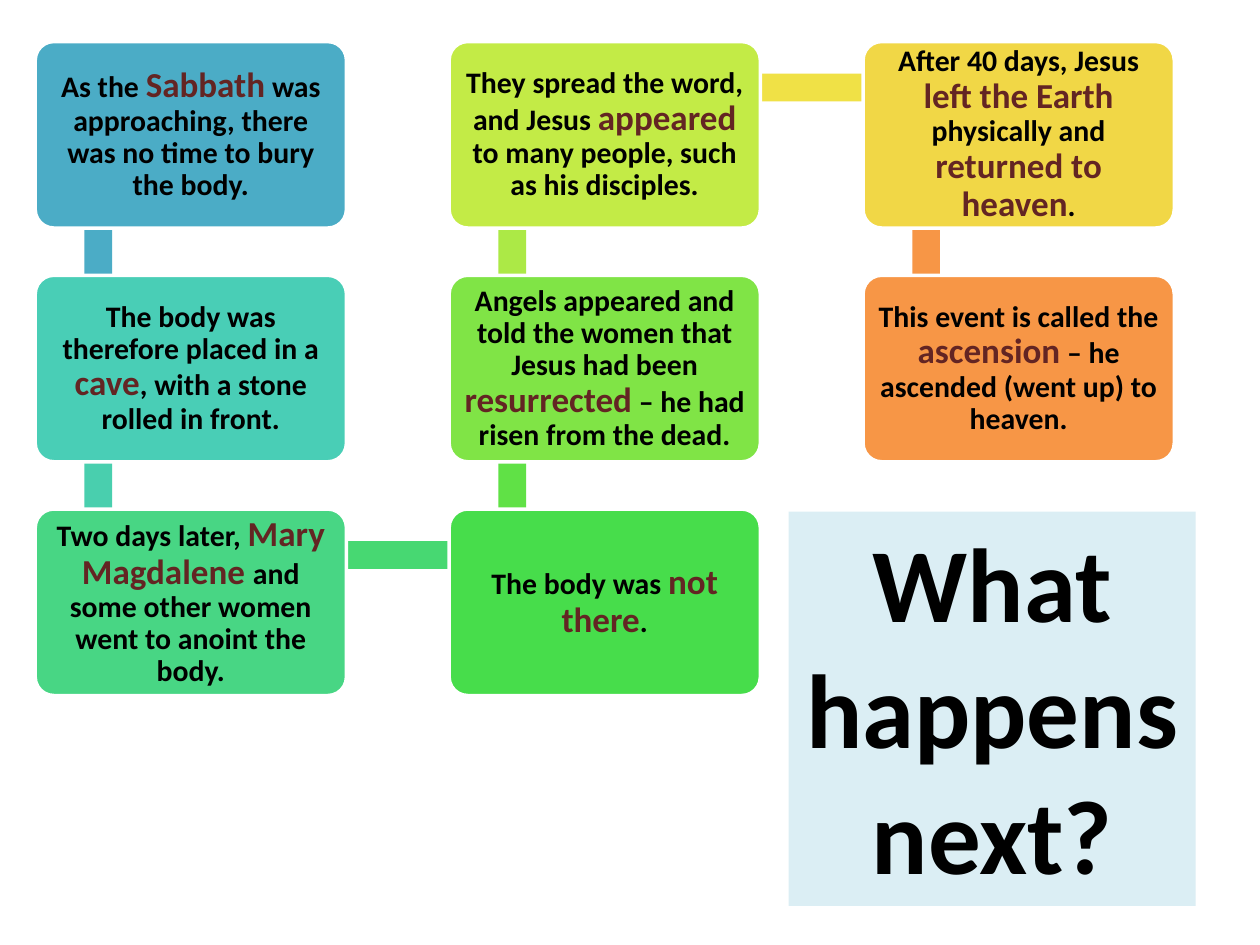
import math
import pptx
import pptx.util
import pptx.dml.color
import pptx.enum.shapes
import pptx.enum.text

Inches = pptx.util.Inches
Pt = pptx.util.Pt

CARD_WIDTH, CARD_HEIGHT = 2.47, 1.48
COLUMN_PITCH, ROW_PITCH = 3.285, 1.855
LINK_THICKNESS = 0.22
NODE_X, NODE_Y = 0.5, 0.365
BLACK, MAROON = "000000", "632523"

# Each step: column, row, card colour, colour of the link onward, text with *key words*
STEPS = [
    (0, 0, "4BACC6", "4BACC6",
     "As the *Sabbath* was approaching, there was no time to bury the body."),
    (0, 1, "49CEB6", "49CFAE",
     "The body was therefore placed in a *cave*, with a stone rolled in front."),
    (0, 2, "48D684", "47D872",
     "Two days later, *Mary Magdalene *and some other women went to anoint the body."),
    (1, 2, "47DD4B", "60E146",
     "The body was *not there*."),
    (1, 1, "80E446", "ACE946",
     "Angels appeared and told the women that Jesus had been *resurrected* – he had risen from the dead."),
    (1, 0, "C3EB46", "F0E146",
     "They spread the word, and Jesus *appeared* to many people, such as his disciples."),
    (2, 0, "F1D746", "F79646",
     "After 40 days, Jesus *left the Earth *physically and *returned to heaven*."),
    (2, 1, "F79646", None,
     "This event is called the *ascension* – he ascended (went up) to heaven."),
]


def color(value):
    return pptx.dml.color.RGBColor.from_string(value)


def paint(shape, fill):
    shape.shadow.inherit = False
    shape.fill.solid()
    shape.fill.fore_color.rgb = color(fill)
    shape.line.fill.background()


def add_link(slide, start, end, fill):
    dx, dy = end[0] - start[0], end[1] - start[1]
    length = math.hypot(dx, dy)
    left = (start[0] + end[0] - length) / 2
    top = (start[1] + end[1] - LINK_THICKNESS) / 2
    link = slide.shapes.add_shape(
        pptx.enum.shapes.MSO_SHAPE.RECTANGLE,
        Inches(left), Inches(top), Inches(length), Inches(LINK_THICKNESS))
    link.rotation = math.degrees(math.atan2(dy, dx)) % 360
    paint(link, fill)


def add_card(slide, left, top, fill, text):
    card = slide.shapes.add_shape(
        pptx.enum.shapes.MSO_SHAPE.ROUNDED_RECTANGLE,
        Inches(left), Inches(top), Inches(CARD_WIDTH), Inches(CARD_HEIGHT))
    card.adjustments[0] = 0.1
    paint(card, fill)
    card.line.color.rgb = color("FFFFFF")
    card.line.width = Pt(2)

    frame = card.text_frame
    frame.word_wrap = True
    frame.vertical_anchor = pptx.enum.text.MSO_ANCHOR.MIDDLE
    frame.margin_left = frame.margin_right = Inches(0.07)
    frame.margin_top = frame.margin_bottom = Inches(0.07)
    sentence = frame.paragraphs[0]
    sentence.alignment = pptx.enum.text.PP_ALIGN.CENTER
    sentence.line_spacing = 0.9
    sentence.font.name = "Calibri"
    sentence.font.bold = True
    for index, words in enumerate(text.split("*")):
        is_key = index % 2 == 1
        run = sentence.add_run()
        run.text = words
        run.font.size = Pt(20 if is_key else 17)
        run.font.color.rgb = color(MAROON if is_key else BLACK)


def add_story(slide, left, top):
    corners = [(left + column * COLUMN_PITCH, top + row * ROW_PITCH)
               for column, row, *_ in STEPS]
    nodes = [(x + NODE_X, y + NODE_Y) for x, y in corners]
    for index, (_, _, fill, link_fill, text) in enumerate(STEPS):
        if link_fill:
            add_link(slide, nodes[index], nodes[index + 1], link_fill)
        add_card(slide, *corners[index], fill, text)


def format_title(slide, left, top, width, height):
    title = slide.shapes.title
    title.left, title.top = Inches(left), Inches(top)
    title.width, title.height = Inches(width), Inches(height)
    title.fill.solid()
    title.fill.fore_color.rgb = color("DBEEF4")
    frame = title.text_frame
    frame.text = "What happens next?"
    frame.word_wrap = True
    frame.auto_size = pptx.enum.text.MSO_AUTO_SIZE.SHAPE_TO_FIT_TEXT
    frame.vertical_anchor = pptx.enum.text.MSO_ANCHOR.TOP
    question = frame.paragraphs[0]
    question.alignment = pptx.enum.text.PP_ALIGN.CENTER
    question.font.name = "Calibri"
    question.font.size = Pt(60)
    question.font.bold = True
    question.font.color.rgb = color(BLACK)


def main():
    deck = pptx.Presentation()
    deck.slide_width, deck.slide_height = Inches(10), Inches(7.5)
    slide = deck.slides.add_slide(deck.slide_layouts[5])
    format_title(slide, 6.26, 4.06, 3.23, 3.13)
    add_story(slide, 0.28, 0.33)
    deck.save("out.pptx")


if __name__ == "__main__":
    main()
